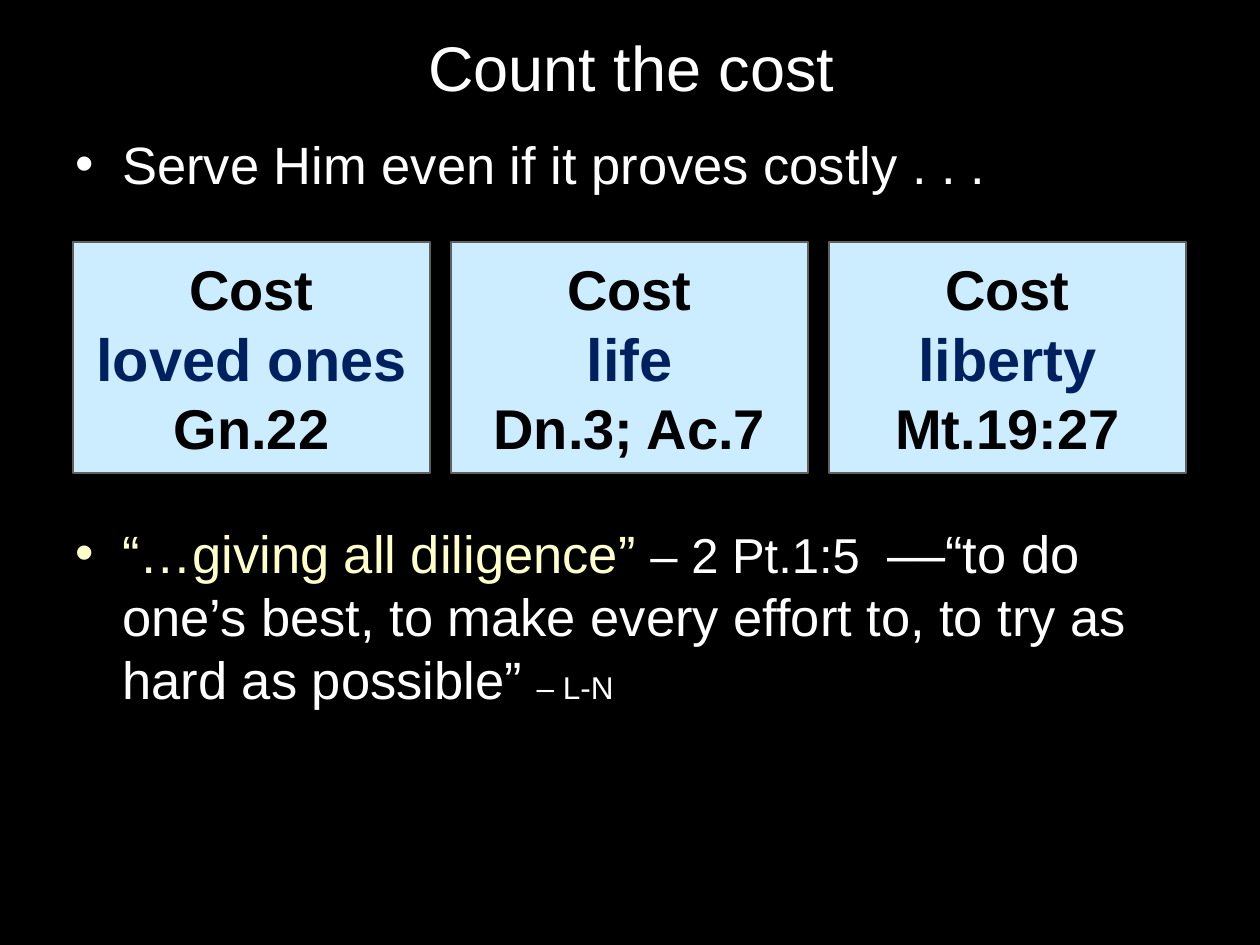
"""Build the "Count the cost" slide with three cost cards between two bullets."""
from dataclasses import dataclass

from lxml import etree
from pptx import Presentation
from pptx.dml.color import RGBColor
from pptx.enum.shapes import MSO_SHAPE
from pptx.enum.text import MSO_ANCHOR, PP_ALIGN
from pptx.oxml.ns import qn
from pptx.util import Emu, Pt

RECTANGLE = MSO_SHAPE.RECTANGLE
MIDDLE = MSO_ANCHOR.MIDDLE
CENTER = PP_ALIGN.CENTER
PX = 914400 // 126


@dataclass(frozen=True)
class Theme:
    font: str = "Arial"
    background: str = "000000"
    text: str = "FFFFFF"
    quote: str = "FFFFCC"
    card: str = "CCECFF"
    card_line: str = "606060"
    card_text: str = "000000"
    cost: str = "002060"
    title_size: int = 36
    body_size: int = 30
    verse_size: int = 28
    source_size: int = 18
    card_size: int = 32
    cost_size: int = 34


def box(left, top, width, height):
    return [Emu(length * PX) for length in (left, top, width, height)]


def style(run, size, color, bold=False):
    run.font.name = theme.font
    run.font.size = Pt(size)
    run.font.bold = bold
    run.font.color.rgb = RGBColor.from_string(color)


theme = Theme()
presentation = Presentation()
presentation.slide_width = Emu(1260 * PX)
presentation.slide_height = Emu(945 * PX)
slide = presentation.slides.add_slide(presentation.slide_layouts[6])
slide.background.fill.solid()
slide.background.fill.fore_color.rgb = RGBColor.from_string(theme.background)

title = slide.shapes.add_textbox(*box(19, 10, 1225, 113))
title.text_frame.word_wrap = True
title.text_frame.vertical_anchor = MIDDLE
title.text_frame.text = "Count the cost"
paragraph = title.text_frame.paragraphs[0]
paragraph.alignment = CENTER
style(paragraph.runs[0], theme.title_size, theme.text)

bullets = [
    (3, [("Serve Him even if it proves costly . . .", theme.body_size, theme.text)]),
    (186, [
        ("“…giving all diligence” ", theme.body_size, theme.quote),
        ("– 2 Pt.1:5  ", theme.verse_size, theme.text),
        ("––“to do one’s best, to make every effort to, to try as hard as possible” ",
         theme.body_size, theme.text),
        ("– L-N", theme.source_size, theme.text),
    ]),
]
body = slide.shapes.add_textbox(*box(63, 126, 1134, 766))
body.text_frame.word_wrap = True
for index, (space_before, pieces) in enumerate(bullets):
    paragraph = body.text_frame.add_paragraph() if index else body.text_frame.paragraphs[0]
    paragraph.space_before = Pt(space_before)
    properties = paragraph._p.get_or_add_pPr()
    properties.set("marL", str(47 * PX))
    properties.set("indent", str(-47 * PX))
    etree.SubElement(properties, qn("a:buFont"), typeface=theme.font)
    etree.SubElement(properties, qn("a:buChar"), char="•")
    for text, size, color in pieces:
        run = paragraph.add_run()
        run.text = text
        style(run, size, color)

cards = [("loved ones", "Gn.22"), ("life", "Dn.3; Ac.7"), ("liberty", "Mt.19:27")]
for index, (cost, verse) in enumerate(cards):
    card = slide.shapes.add_shape(RECTANGLE, *box(73 + 378 * index, 242, 357, 231))
    card.shadow.inherit = False
    card.fill.solid()
    card.fill.fore_color.rgb = RGBColor.from_string(theme.card)
    card.line.color.rgb = RGBColor.from_string(theme.card_line)
    card.line.width = Pt(0.75)
    card.text_frame.word_wrap = True
    card.text_frame.vertical_anchor = MIDDLE
    paragraph = card.text_frame.paragraphs[0]
    paragraph.text = f"Cost\v{cost}\v{verse}"
    paragraph.alignment = CENTER
    heading_run, cost_run, verse_run = paragraph.runs
    style(heading_run, theme.card_size, theme.card_text, bold=True)
    style(cost_run, theme.cost_size, theme.cost, bold=True)
    style(verse_run, theme.card_size, theme.card_text, bold=True)

presentation.save("out.pptx")
